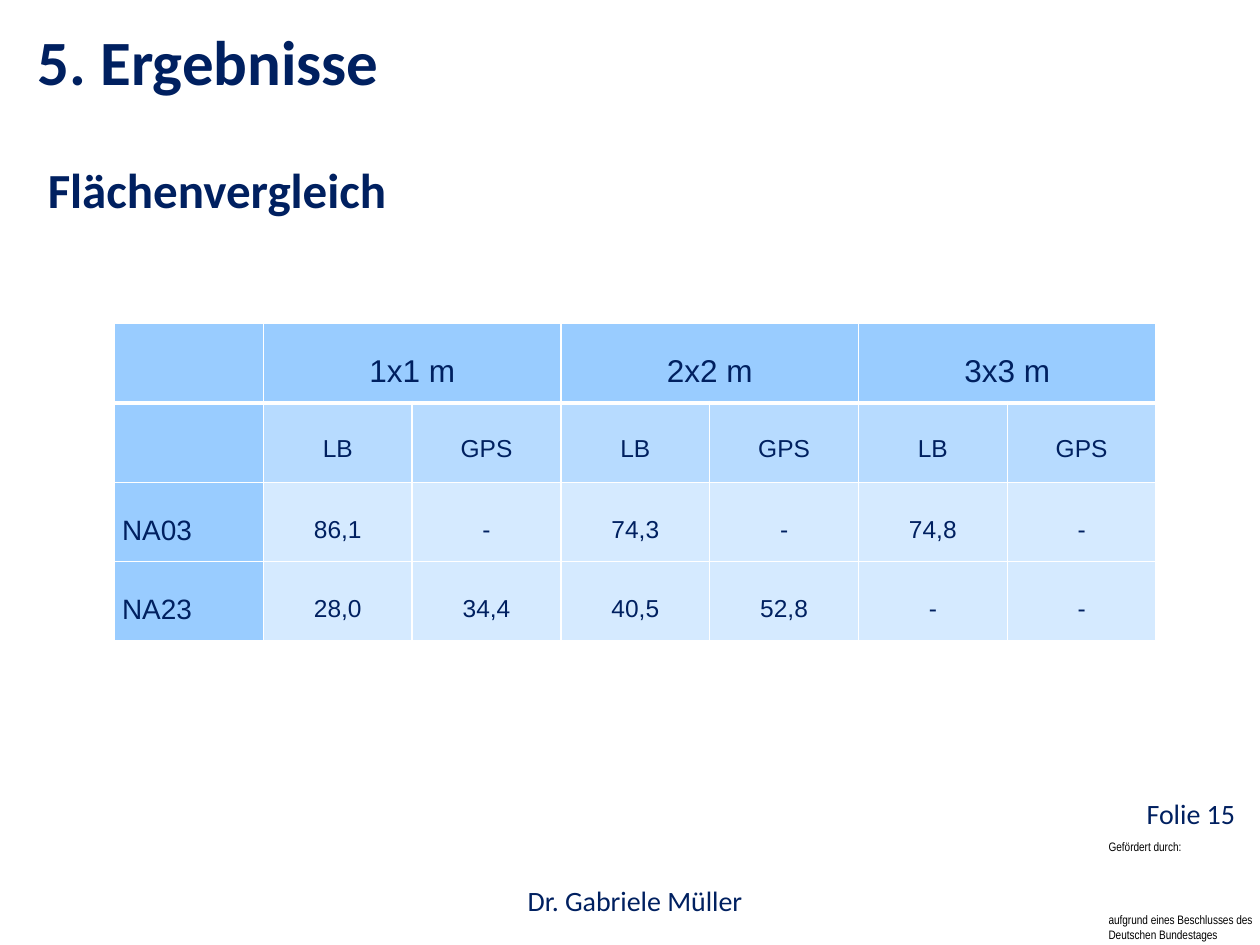
from dataclasses import dataclass
from typing import Optional

from lxml import etree
from pptx import Presentation
from pptx.dml import color
from pptx.enum import text
from pptx.oxml import ns
from pptx.util import Pt

NAVY, WHITE, BLACK = "002060", "FFFFFF", "000000"
HEAD, SUBHEAD, BODY = "99CCFF", "B7DBFF", "D5EAFF"
ALIGN = text.PP_ALIGN


@dataclass
class Label:
    words: str
    left: float
    top: float
    width: float
    height: float
    size: float
    font: str = "Calibri"
    ink: str = NAVY
    bold: bool = False
    align: ALIGN = ALIGN.LEFT
    wrap: bool = True
    inset: Optional[float] = None
    line: Optional[float] = None


@dataclass
class RowStyle:
    fill: str
    size: float
    space: float
    bottom: float = 1


def rgb(value: str) -> color.RGBColor:
    return color.RGBColor.from_string(value)


def style_run(r, size: float, font: str, ink: str, bold: bool = False) -> None:
    r.font.size, r.font.name, r.font.bold = Pt(size), font, bold
    r.font.color.rgb = rgb(ink)


def add_label(s, item: Label) -> None:
    sp = s.shapes.add_textbox(Pt(item.left), Pt(item.top), Pt(item.width), Pt(item.height))
    tf = sp.text_frame
    tf.word_wrap = item.wrap
    if item.inset is not None:
        tf.margin_left = tf.margin_top = tf.margin_right = tf.margin_bottom = Pt(item.inset)
    tf.text = item.words
    p = tf.paragraphs[0]
    p.alignment = item.align
    if item.line:
        p.line_spacing = Pt(item.line)
    style_run(p.runs[0], item.size, item.font, item.ink, item.bold)


def add_borders(cell, bottom: float) -> None:
    tc_pr = cell._tc.get_or_add_tcPr()
    for side, width in (("L", 1), ("R", 1), ("T", 1), ("B", bottom)):
        ln = etree.SubElement(tc_pr, ns.qn(f"a:ln{side}"), w=str(Pt(width)))
        fill = etree.SubElement(ln, ns.qn("a:solidFill"))
        etree.SubElement(fill, ns.qn("a:srgbClr"), val=WHITE)


def fill_cell(cell, words: str, row: RowStyle, is_name: bool) -> None:
    add_borders(cell, row.bottom)
    cell.fill.solid()
    cell.fill.fore_color.rgb = rgb(HEAD if is_name else row.fill)
    cell.vertical_anchor = text.MSO_ANCHOR.MIDDLE
    cell.margin_left = cell.margin_right = Pt(4.3)
    cell.margin_top, cell.margin_bottom = Pt(row.space), 0
    if not words:
        return
    cell.text_frame.text = words
    p = cell.text_frame.paragraphs[0]
    p.alignment = ALIGN.JUSTIFY if is_name else ALIGN.CENTER
    p.line_spacing, p.space_after = 1.4, Pt(row.space)
    style_run(p.runs[0], 16 if is_name else row.size, "Arial", NAVY)


LABELS = [
    # Footer
    Label("Gefördert durch:", 626.4, 475.9, 102.2, 15.8, 7, "Arial Narrow", BLACK),
    Label("aufgrund eines Beschlusses des Deutschen Bundestages",
          626.4, 517.7, 124.6, 24.5, 7, "Arial Narrow", BLACK),
    Label("Dr. Gabriele Müller", 93.6, 501.1, 538.6, 23.8, 16, align=ALIGN.CENTER),
    Label("Folie 15", 655.2, 455, 65.5, 19.4, 16, inset=0),
    # Headings
    Label("Flächenvergleich", 20.2, 71.3, 210.2, 52.6, 28, bold=True, wrap=False, line=50),
    Label("5. Ergebnisse", 14.4, 9.4, 583.9, 51.1, 36, bold=True),
]

ROW_STYLES = [RowStyle(HEAD, 18, 1, bottom=3), RowStyle(SUBHEAD, 14, 1),
              RowStyle(BODY, 14, 3), RowStyle(BODY, 14, 3)]
ROWS = [
    ["", "1x1 m", "", "2x2 m", "", "3x3 m", ""],
    [""] + ["LB", "GPS"] * 3,
    ["NA03", "86,1", "-", "74,3", "-", "74,8", "-"],
    ["NA23", "28,0", "34,4", "40,5", "52,8", "-", "-"],
]


def add_results(s) -> None:
    width, height = 595.2, 181.4
    frame = s.shapes.add_table(len(ROWS), len(ROWS[0]), Pt(65.5), Pt(185),
                               Pt(width), Pt(height))
    table = frame.table
    table.first_row = table.horz_banding = False
    for column in table.columns:
        column.width = Pt(width / len(ROWS[0]))
    for row in table.rows:
        row.height = Pt(height / len(ROWS))
    for i, (words, style) in enumerate(zip(ROWS, ROW_STYLES)):
        for j, word in enumerate(words):
            fill_cell(table.cell(i, j), word, style, is_name=j == 0)
    # Each plot size spans its two methods
    for j in range(1, len(ROWS[0]), 2):
        table.cell(0, j).merge(table.cell(0, j + 1))


def main() -> None:
    prs = Presentation()
    prs.slide_width, prs.slide_height = Pt(720), Pt(540)
    s = prs.slides.add_slide(prs.slide_layouts[6])
    add_results(s)
    for item in LABELS:
        add_label(s, item)
    prs.save("out.pptx")


if __name__ == "__main__":
    main()
